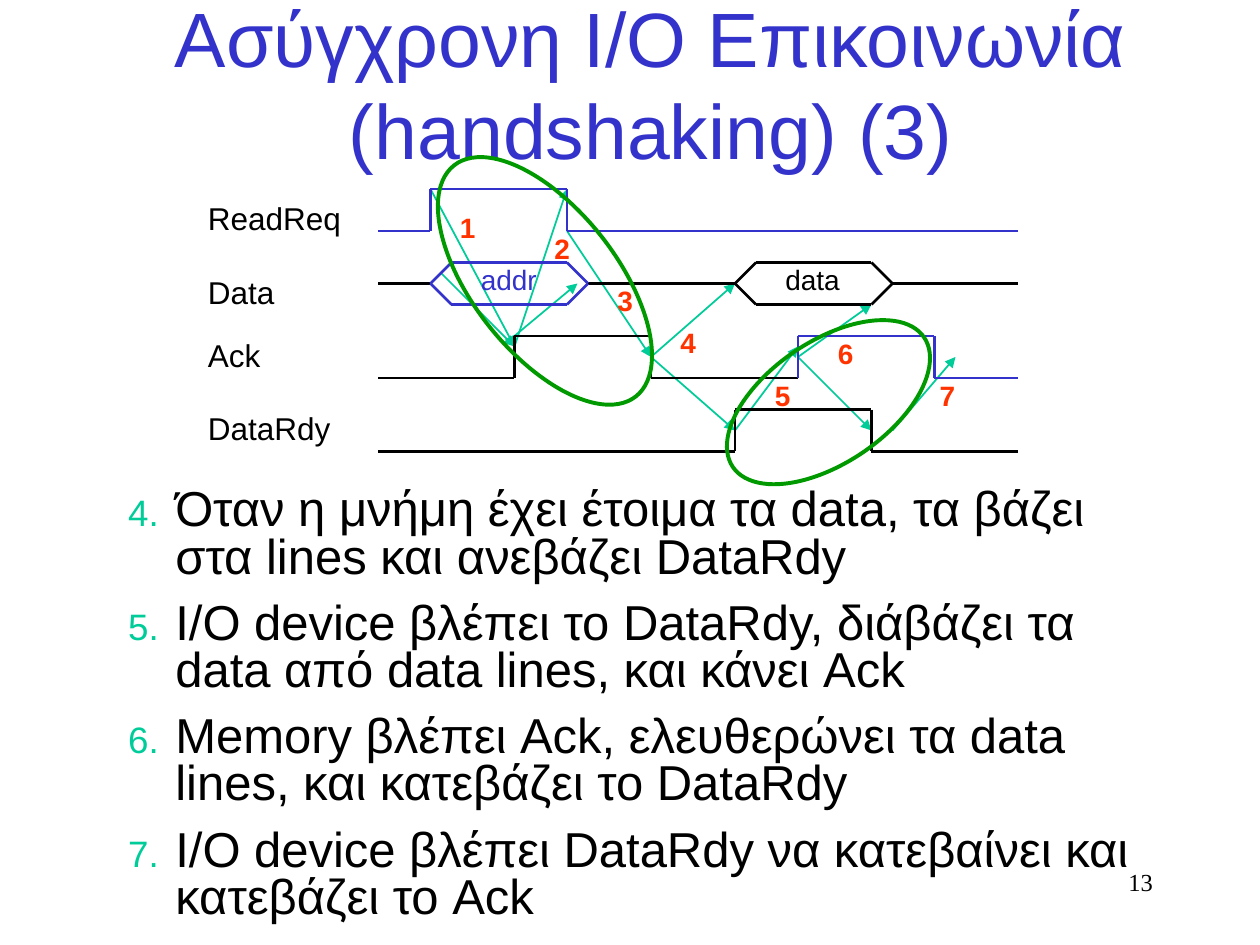
from itertools import pairwise

from lxml import etree
from pptx import Presentation
from pptx import util as u
from pptx.dml.color import RGBColor
from pptx.enum import shapes, text
from pptx.oxml import ns

PX = u.Inches(1) // 120  # 120 px to the inch

BLUE = RGBColor(0x33, 0x33, 0xCC)
BLACK = RGBColor(0, 0, 0)
TEAL = RGBColor(0x00, 0xCC, 0x99)
RED = RGBColor(0xFF, 0x33, 0x00)
GREEN = RGBColor(0x00, 0x99, 0x00)


def add_xml(parent, tag, **attributes):
    return etree.SubElement(parent, ns.qn(tag), attributes)


class TimingSlide:
    font = "Arial"

    def __init__(self, slide):
        self.slide = slide

    def add_words(self, paragraph, words, size, color, bold=False, font=None):
        run = paragraph.add_run()
        run.text = words
        run.font.name = font or self.font
        run.font.size = u.Pt(size)
        run.font.bold = bold
        run.font.color.rgb = color

    def place(self, holder, left, top, width, height):
        holder.left, holder.top = left * PX, top * PX
        holder.width, holder.height = width * PX, height * PX
        frame = holder.text_frame
        frame.word_wrap = True
        frame.auto_size = text.MSO_AUTO_SIZE.NONE
        return frame

    def title(self, words, *box):
        frame = self.place(self.slide.shapes.title, *box)
        frame.vertical_anchor = text.MSO_ANCHOR.MIDDLE
        heading = frame.paragraphs[0]
        heading.alignment = text.PP_ALIGN.CENTER
        self.add_words(heading, words, 44, BLUE)

    def steps(self, sentences, first, *box):
        frame = self.place(self.slide.placeholders[1], *box)
        frame.vertical_anchor = text.MSO_ANCHOR.TOP
        for index, sentence in enumerate(sentences):
            step = frame.add_paragraph() if index else frame.paragraphs[0]
            props = step._p.get_or_add_pPr()
            props.set("marL", str(45 * PX))
            props.set("indent", str(-45 * PX))
            add_xml(add_xml(props, "a:buClr"), "a:srgbClr", val=str(TEAL))
            add_xml(props, "a:buSzPct", val="75000")
            add_xml(props, "a:buFont", typeface=self.font)
            add_xml(props, "a:buAutoNum", type="arabicPeriod", startAt=str(first))
            step.line_spacing = 0.8
            step.space_before = u.Pt(11 if index else 0)
            self.add_words(step, sentence, 28, BLACK)

    def label(self, words, left, top, width, height, size, color, bold=False):
        box = self.slide.shapes.add_textbox(0, 0, 0, 0)
        frame = self.place(box, left, top, width, height)
        frame.margin_left = frame.margin_right = 8 * PX
        frame.margin_top = frame.margin_bottom = 4 * PX
        frame.paragraphs[0].line_spacing = 0.9
        self.add_words(frame.paragraphs[0], words, size, color, bold)

    def page_number(self, words, *box):
        frame = self.place(self.slide.shapes.add_textbox(0, 0, 0, 0), *box)
        frame.paragraphs[0].alignment = text.PP_ALIGN.RIGHT
        self.add_words(frame.paragraphs[0], words, 14, BLACK, font="Times New Roman")

    def line(self, start, end, color, weight=1.5):
        segment = self.slide.shapes.add_connector(
            shapes.MSO_CONNECTOR.STRAIGHT, *(v * PX for v in (*start, *end)))
        segment.line.color.rgb = color
        segment.line.width = u.Pt(weight)
        add_xml(segment._element.spPr, "a:effectLst")
        return segment

    def signal(self, points, color):
        for start, end in pairwise(points):
            self.line(start, end, color)

    def bus_value(self, words, left, color):
        right, top, middle, bottom = left + 150, 250, 270, 290
        self.signal([(left, middle), (left + 20, top), (right - 20, top),
                     (right, middle), (right - 20, bottom), (left + 20, bottom),
                     (left, middle)], color)
        self.label(words, left + 40, top, 80, 36, 16, color)

    def arrow(self, start, end):
        line = self.line(start, end, TEAL, 1).line
        add_xml(line._get_or_add_ln(), "a:tailEnd", type="triangle")

    def ring(self, left, top, width, height, angle):
        oval = self.slide.shapes.add_shape(
            shapes.MSO_SHAPE.OVAL, left * PX, top * PX, width * PX, height * PX)
        oval.rotation = angle
        oval.shadow.inherit = False
        oval.fill.background()
        oval.line.color.rgb = GREEN
        oval.line.width = u.Pt(2.25)


def main():
    deck = Presentation()
    deck.slide_width, deck.slide_height = 1200 * PX, 900 * PX
    page = TimingSlide(deck.slides.add_slide(deck.slide_layouts[1]))

    page.title("Ασύγχρονη Ι/Ο Επικοινωνία (handshaking) (3)", 110, 4, 1020, 150)
    page.steps([
        "Όταν η μνήμη έχει έτοιμα τα data, τα βάζει στα lines και ανεβάζει DataRdy",
        "I/O device βλέπει το DataRdy, διάβάζει τα data από data lines, και κάνει Ack",
        "Memory βλέπει Ack, ελευθερώνει τα data lines, και κατεβάζει το DataRdy",
        "I/O device βλέπει DataRdy να κατεβαίνει και κατεβάζει το Ack",
    ], 4, 110, 460, 1020, 410)
    page.page_number("13", 860, 820, 250, 60)

    # Cause-and-effect arrows between the signals
    for start, end in [
        ((410, 180), (490, 330)), ((420, 260), (490, 330)),
        ((490, 330), (540, 180)), ((490, 320), (550, 270)),
        ((540, 220), (620, 340)), ((620, 340), (700, 270)),
        ((620, 340), (700, 410)), ((700, 410), (760, 330)),
        ((760, 340), (830, 410)), ((760, 340), (830, 290)),
        ((850, 410), (910, 340)),
    ]:
        page.arrow(start, end)

    # Signal names
    for name, top in [("ReadReq", 190), ("Data", 260), ("Ack", 320), ("DataRdy", 390)]:
        page.label(name, 190, top, 150, 40, 18, BLACK)

    # ReadReq
    page.signal([(360, 220), (410, 220), (410, 180), (540, 180), (540, 220),
                 (970, 220)], BLUE)
    # Data: idle stretches and the two bus values
    for left, right in [(360, 410), (560, 700), (850, 970)]:
        page.line((left, 270), (right, 270), BLACK)
    page.bus_value("addr", 410, BLUE)
    page.bus_value("data", 700, BLACK)
    # Ack
    page.signal([(360, 360), (490, 360), (490, 320), (620, 320), (620, 360),
                 (760, 360)], BLACK)
    page.signal([(760, 360), (760, 320), (890, 320), (890, 360), (970, 360)], BLUE)
    # DataRdy
    page.signal([(360, 430), (700, 430), (700, 390), (830, 390), (830, 430),
                 (970, 430)], BLACK)

    # Step numbers
    corners = [(430, 200), (520, 220), (580, 270), (640, 310), (730, 360),
               (790, 320), (887, 360)]
    for number, (left, top) in enumerate(corners, 1):
        page.label(str(number), left, top, 40, 36, 16, RED, bold=True)

    # Rings around the two handshakes
    page.ring(379, 199, 280, 137, 51.8)
    page.ring(679, 325, 220, 116, 145.9)

    deck.save("out.pptx")


if __name__ == "__main__":
    main()
